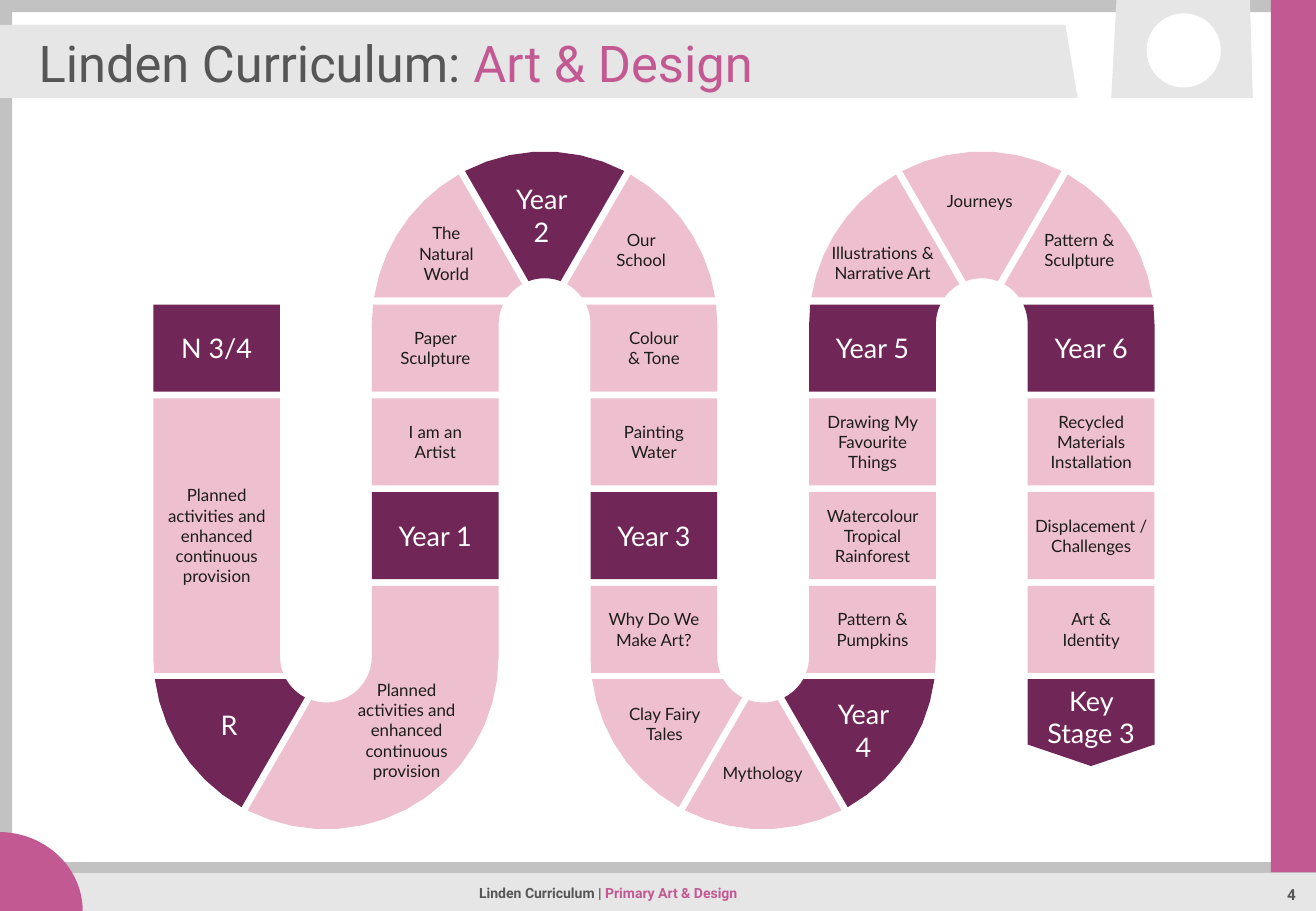
"""Build the Art & Design curriculum pathway slide."""
import math
from dataclasses import dataclass

import pptx
import pptx.dml.color
import pptx.enum.shapes
import pptx.enum.text
import pptx.oxml.ns
import pptx.util
from lxml import etree
from pptx.util import Cm


@dataclass(frozen=True)
class Theme:
    year: str = "702656"
    unit: str = "EEBFCF"
    accent: str = "C35993"
    frame: str = "C2C2C2"
    panel: str = "E6E6E6"
    paper: str = "FFFFFF"
    heading: str = "565656"
    ink: str = "1D1D1B"
    label_font: str = "Lato"
    heading_font: str = "Roboto"
    title_size: float = 30
    year_size: float = 16
    unit_size: float = 10
    number_size: float = 9
    footer_size: float = 8.3


@dataclass(frozen=True)
class Arch:
    centre: float
    outward: int
    gaps: tuple
    seam: float
    flank: float
    crown: float


THEME = Theme()
TITLE = [("Linden Curriculum: ", THEME.heading), ("Art & Design", THEME.accent)]
FOOTER = [("Linden Curriculum | ", THEME.heading), ("Primary Art & Design", THEME.accent)]
NUMBER = [("4", THEME.heading)]
PLANNED = "Planned activities and enhanced continuous provision"

# column, first row, last row, kind, label, label width
CELLS = [
    (0, 0, 0, "year", "N 3/4", 2.1),
    (0, 1, 3, "unit", PLANNED, 2.8),
    (1, 0, 0, "unit", "Paper Sculpture", 2.44),
    (1, 1, 1, "unit", "I am an Artist", 1.83),
    (1, 2, 2, "year", "Year 1", 3.07),
    (2, 0, 0, "unit", "Colour\n& Tone", 1.88),
    (2, 1, 1, "unit", "Painting Water", 1.88),
    (2, 2, 2, "year", "Year 3", 2.46),
    (2, 3, 3, "unit", "Why Do We Make Art?", 2.46),
    (3, 0, 0, "year", "Year 5", 2.46),
    (3, 1, 1, "unit", "Drawing My Favourite Things", 2.46),
    (3, 2, 2, "unit", "Watercolour Tropical Rainforest", 2.9),
    (3, 3, 3, "unit", "Pattern & Pumpkins", 2.24),
    (4, 0, 0, "year", "Year 6", 3.07),
    (4, 1, 1, "unit", "Recycled Materials Installation", 2.51),
    (4, 2, 2, "unit", "Displacement / Challenges", 2.92),
    (4, 3, 3, "unit", "Art & Identity", 1.88),
]
# gap, part of the bend, kind, label, label width, label centre
BENDS = [
    (0, "left", "year", "R", 1.55, (4.79, 15.15)),
    (0, "sweep", "unit", PLANNED, 3.02, (8.5, 15.27)),
    (1, "left", "unit", "The Natural World", 2.31, (9.33, 5.3)),
    (1, "middle", "year", "Year 2", 1.85, (11.32, 4.5)),
    (1, "right", "unit", "Our School", 1.65, (13.4, 5.23)),
    (2, "left", "unit", "Clay Fairy Tales", 2.49, (13.89, 15.14)),
    (2, "middle", "unit", "Mythology", 2.36, (15.94, 16.17)),
    (2, "right", "year", "Year\n4", 2.41, (18.05, 15.27)),
    (3, "left", "unit", "Illustrations & Narrative Art", 2.77, (18.45, 5.5)),
    (3, "middle", "unit", "Journeys", 2.41, (20.48, 4.2)),
    (3, "right", "unit", "Pattern & Sculpture", 2.24, (22.56, 5.23)),
]
FINISH = ("Key Stage 3", 2.62, 14.99)

SLIDE_W, SLIDE_H = 27.51, 19.05
OUTER, INNER = 3.61, 0.96
COLUMN_W, COLUMN_STEP = OUTER - INNER, OUTER + INNER
FIRST_CENTRE = 4.53
FIRST_TOP, ROW_H, ROW_STEP = 6.37, 1.82, 1.96
LAST_ROW = 3
TOP = Arch(6.78, -1, (1, 3), 0.56, 0.02, 0.32)
BOTTOM = Arch(13.73, 1, (0, 2), 0.47, 0.09, 0.38)
ARC_STEP = math.radians(8)
LABEL_INSET = 0.25
SHAPES = pptx.enum.shapes.MSO_SHAPE
ALIGN = pptx.enum.text.PP_ALIGN

deck = pptx.Presentation()
deck.slide_width, deck.slide_height = Cm(SLIDE_W), Cm(SLIDE_H)
slide = deck.slides.add_slide(deck.slide_layouts[6])


def rgb(colour):
    return pptx.dml.color.RGBColor.from_string(colour)


def paint(shape, colour):
    shape.shadow.inherit = False
    shape.fill.solid()
    shape.fill.fore_color.rgb = rgb(colour)
    shape.line.fill.background()
    return shape


def preset(kind, left, top, width, height, colour):
    return paint(slide.shapes.add_shape(kind, Cm(left), Cm(top), Cm(width), Cm(height)), colour)


def outline(points, colour):
    corners = [(Cm(x), Cm(y)) for x, y in points]
    builder = slide.shapes.build_freeform(*corners[0], scale=1.0)
    builder.add_line_segments(corners[1:], close=True)
    return paint(builder.convert_to_shape(), colour)


def style(run, font, size, colour, bold=False):
    run.font.name, run.font.size, run.font.bold = font, pptx.util.Pt(size), bold
    run.font.color.rgb = rgb(colour)


def write(parts, left, top, width, height, size, bold=False, align=ALIGN.CENTER):
    frame = slide.shapes.add_textbox(Cm(left), Cm(top), Cm(width), Cm(height)).text_frame
    frame.word_wrap = True
    frame.vertical_anchor = pptx.enum.text.MSO_ANCHOR.MIDDLE
    line = frame.paragraphs[0]
    line.alignment = align
    for words, colour in parts:
        run = line.add_run()
        run.text = words
        style(run, THEME.heading_font, size, colour, bold)


def label(piece, words, kind, width, x, y):
    """Write in the piece, with insets that centre the words on x and y."""
    size, colour = {"year": (THEME.year_size, THEME.paper), "unit": (THEME.unit_size, THEME.ink)}[kind]
    frame = piece.text_frame
    frame.text = words
    frame.word_wrap = True
    frame.vertical_anchor = pptx.enum.text.MSO_ANCHOR.MIDDLE
    reach = Cm(width / 2 - LABEL_INSET)
    drop = 2 * (Cm(y) - piece.top) - piece.height
    frame.margin_left = max(0, Cm(x) - reach - piece.left)
    frame.margin_right = max(0, piece.left + piece.width - Cm(x) - reach)
    frame.margin_top, frame.margin_bottom = max(0, drop), max(0, -drop)
    for line in frame.paragraphs:
        line.alignment = ALIGN.CENTER
        for run in line.runs:
            style(run, THEME.label_font, size, colour)


def column_centre(column):
    return FIRST_CENTRE + column * COLUMN_STEP


def row_top(row):
    return FIRST_TOP + row * ROW_STEP


def arc(radius, start, stop):
    """Points between two cuts, each a direction in degrees and a rise above the centre."""
    first, last = (math.radians(turn) + math.asin(rise * math.cos(math.radians(turn)) / radius)
                   for turn, rise in (start, stop))
    steps = math.ceil(abs(last - first) / ARC_STEP)
    angles = [first + (last - first) * step / steps for step in range(steps + 1)]
    return [(radius * math.cos(angle), radius * math.sin(angle)) for angle in angles]


def band(arch, gap, start, stop, tail=0):
    """Part of a bend, with an optional straight tail along the column at its stop."""
    side = math.cos(math.radians(stop[0]))
    ends = [(side * OUTER, -tail), (side * INNER, -tail)] if tail else []
    points = arc(OUTER, start, stop) + ends + arc(INNER, stop, start)
    middle = column_centre(gap) + COLUMN_STEP / 2
    return [(middle + x, arch.centre + arch.outward * y) for x, y in points]


def draw_cell(column, first, last, colour):
    top, bottom = row_top(first), row_top(last) + ROW_H
    arch = TOP if first == 0 else BOTTOM
    gaps = [gap for gap in arch.gaps if column in (gap, gap + 1)]
    if gaps and (first == 0 or last == LAST_ROW):
        near, far = (top, bottom) if arch is TOP else (bottom, top)
        turn = 180 if column == gaps[0] else 0
        rise, tail = abs(near - arch.centre), abs(far - arch.centre)
        return outline(band(arch, gaps[0], (turn, rise), (turn, 0), tail), colour)
    return preset(SHAPES.RECTANGLE, column_centre(column) - COLUMN_W / 2, top,
                  COLUMN_W, bottom - top, colour)


def draw_bend(gap, part, colour):
    arch = TOP if gap in TOP.gaps else BOTTOM
    cuts = {
        "right": ((0, arch.seam), (60, arch.flank)),
        "middle": ((60, arch.crown), (120, arch.crown)),
        "left": ((120, arch.flank), (180, arch.seam)),
        "sweep": ((120, arch.crown), (0, 0)),
    }[part]
    tail = arch.centre - row_top(LAST_ROW) if part == "sweep" else 0
    return outline(band(arch, gap, *cuts, tail), colour)


def draw_surround():
    preset(SHAPES.FRAME, 0, 0, SLIDE_W, SLIDE_H, THEME.frame).adjustments[0] = 0.0133
    preset(SHAPES.RECTANGLE, 0.81, 18.24, SLIDE_W - 0.81, SLIDE_H - 18.24, THEME.panel)
    rule = slide.shapes.add_connector(pptx.enum.shapes.MSO_CONNECTOR.STRAIGHT,
                                      Cm(0.13), Cm(18.14), Cm(SLIDE_W), Cm(18.14))
    rule.line.color.rgb, rule.line.width = rgb(THEME.frame), pptx.util.Pt(7)
    etree.SubElement(rule._element.spPr, pptx.oxml.ns.qn("a:effectLst"))
    preset(SHAPES.ARC, -1.78, 17.4, 3.51, 3.3, THEME.accent)
    outline([(0, 0.52), (22.27, 0.52), (22.53, 2.05), (0, 2.05)], THEME.panel)
    preset(SHAPES.RECTANGLE, 26.57, 0, SLIDE_W - 26.57, 18.24, THEME.accent)
    outline([(23.34, 0), (26.13, 0), (26.19, 2.05), (23.23, 2.05)], THEME.panel)
    preset(SHAPES.OVAL, 23.97, 0.28, 1.55, 1.55, THEME.paper)
    write(FOOTER, 5.21, 18.3, 15.01, 0.76, THEME.footer_size, True)
    write(NUMBER, 26.5, 18.36, 1, 0.69, THEME.number_size, True)
    write(TITLE, 0.56, 0.66, 21.39, 1.27, THEME.title_size, align=ALIGN.LEFT)


draw_surround()
for column, first, last, kind, words, width in CELLS:
    piece = draw_cell(column, first, last, getattr(THEME, kind))
    middle = (row_top(first) + row_top(last) + ROW_H) / 2
    label(piece, words, kind, width, column_centre(column), middle)
for gap, part, kind, words, width, centre in BENDS:
    label(draw_bend(gap, part, getattr(THEME, kind)), words, kind, width, *centre)
tip, half, shoulder = column_centre(4), COLUMN_W / 2, 15.57
arrow = outline([(tip - half, 14.2), (tip + half, 14.2), (tip + half, shoulder),
                 (tip, 16.02), (tip - half, shoulder)], THEME.year)
words, width, middle = FINISH
label(arrow, words, "year", width, tip, middle)
deck.save("out.pptx")
